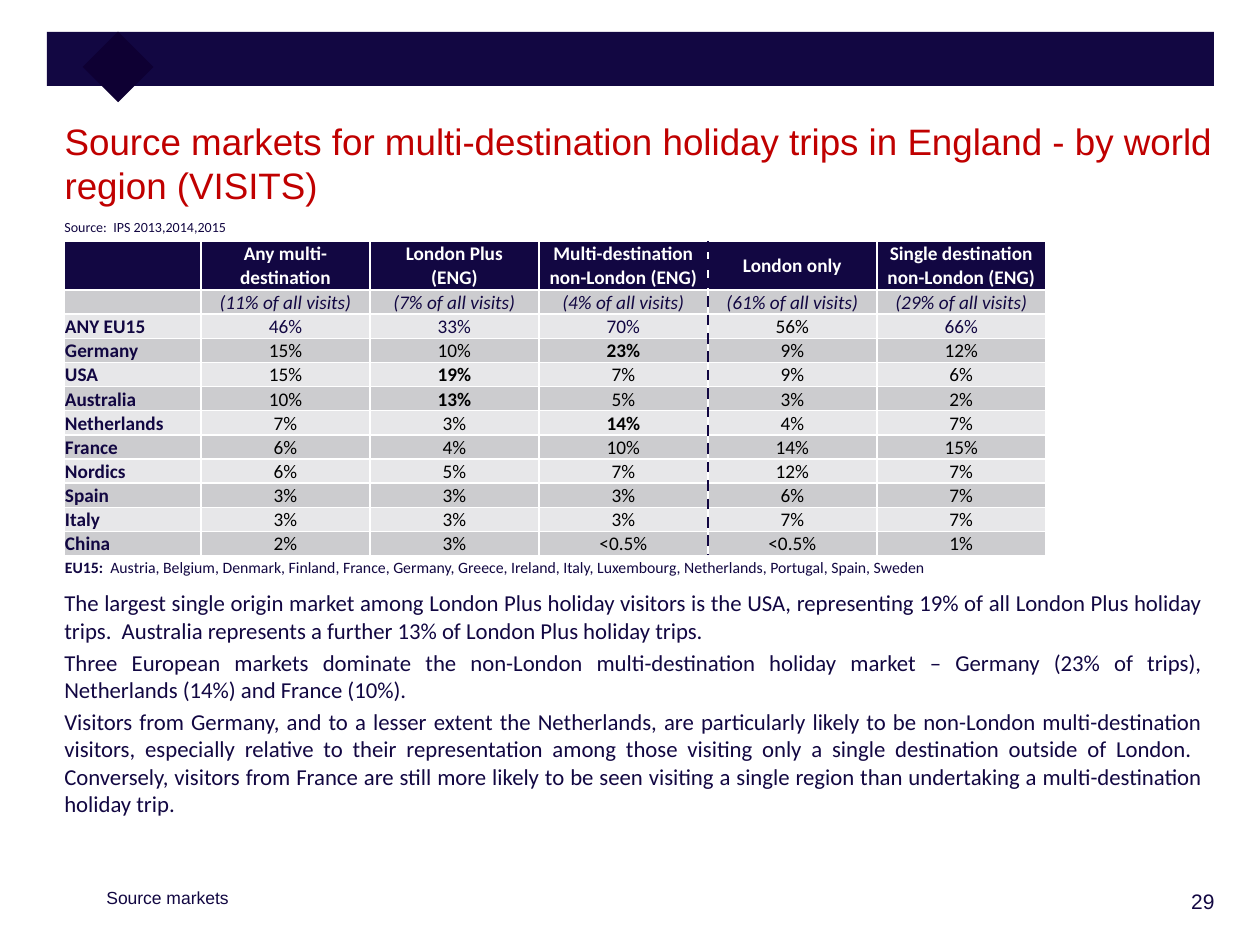
"""Build the slide on source markets for multi-destination holiday trips in England."""
import pptx
import pptx.dml.color
import pptx.enum.dml
import pptx.enum.shapes
import pptx.enum.text
import pptx.oxml.ns
import pptx.util
from lxml import etree

RGB = pptx.dml.color.RGBColor
NAVY = RGB(0x12, 0x07, 0x42)
DEEP_NAVY = RGB(0x0E, 0x00, 0x33)
RED = RGB(0xC0, 0x00, 0x00)
BLACK = RGB(0x00, 0x00, 0x00)
WHITE = RGB(0xFF, 0xFF, 0xFF)
DARK_BAND = RGB(0xCC, 0xCC, 0xCF)
LIGHT_BAND = RGB(0xE7, 0xE7, 0xE9)

ALIGN = pptx.enum.text.PP_ALIGN
ANCHOR = pptx.enum.text.MSO_ANCHOR

TITLE = "Source markets for multi-destination holiday trips in England - by world region (VISITS)"
SOURCE = "Source:  IPS 2013,2014,2015"
SECTION = "Source markets"
PAGE = "29"
HEADINGS = ["", "Any multi-destination", "London Plus\v(ENG)", "Multi-destination non-London (ENG)",
            "London only", "Single destination non-London (ENG)"]
SHARES = ["", "(11% of all visits)", "(7% of all visits)", "(4% of all visits)",
          "(61% of all visits)", "(29% of all visits)"]
MARKETS = [
    ["ANY EU15", "46%", "33%", "70%", "56%", "66%"],
    ["Germany", "15%", "10%", "23%", "9%", "12%"],
    ["USA", "15%", "19%", "7%", "9%", "6%"],
    ["Australia", "10%", "13%", "5%", "3%", "2%"],
    ["Netherlands", "7%", "3%", "14%", "4%", "7%"],
    ["France", "6%", "4%", "10%", "14%", "15%"],
    ["Nordics", "6%", "5%", "7%", "12%", "7%"],
    ["Spain", "3%", "3%", "3%", "6%", "7%"],
    ["Italy", "3%", "3%", "3%", "7%", "7%"],
    ["China", "2%", "3%", "<0.5%", "<0.5%", "1%"],
]
HIGHLIGHTS = {("Germany", 3), ("USA", 2), ("Australia", 2), ("Netherlands", 3)}
EU15 = ("EU15:  ", "Austria, Belgium, Denmark, Finland, France, Germany, Greece, Ireland, Italy, "
        "Luxembourg, Netherlands, Portugal, Spain, Sweden")
FINDINGS = [
    "The largest single origin market among London Plus holiday visitors is the USA, representing "
    "19% of all London Plus holiday trips.  Australia represents a further 13% of London Plus "
    "holiday trips.",
    "Three European markets dominate the non-London multi-destination holiday market – Germany "
    "(23% of trips), Netherlands (14%) and France (10%).",
    "Visitors from Germany, and to a lesser extent the Netherlands, are particularly likely to be "
    "non-London multi-destination visitors, especially relative to their representation among those "
    "visiting only a single destination outside of London.  Conversely, visitors from France are "
    "still more likely to be seen visiting a single region than undertaking a multi-destination "
    "holiday trip.",
]

TABLE_LEFT, TABLE_TOP = 64, 241
LABEL_WIDTH, VALUE_WIDTH = 137, 169
HEADING_HEIGHT, ROW_HEIGHT, NOTE_HEIGHT = 49, 24, 22


def px(length):
    return pptx.util.Emu(round(length * 914400 / 126))


def style(run, size, color, face="Calibri", bold=False, italic=False):
    font = run.font
    font.size, font.name, font.bold, font.italic = pptx.util.Pt(size), face, bold, italic
    font.color.rgb = color


def add_block(slide, left, top, width, height, color, rotation=0):
    block = slide.shapes.add_shape(pptx.enum.shapes.MSO_SHAPE.RECTANGLE,
                                   px(left), px(top), px(width), px(height))
    block.shadow.inherit = False
    block.fill.solid()
    block.fill.fore_color.rgb = color
    block.line.fill.background()
    block.rotation = rotation


def add_text(slide, place, paragraphs, size, face="Calibri", align=ALIGN.LEFT):
    frame = slide.shapes.add_textbox(*map(px, place)).text_frame
    frame.word_wrap = True
    frame.text = "\n".join(paragraphs)
    for number, paragraph in enumerate(frame.paragraphs):
        paragraph.alignment = align
        if number:
            paragraph.space_before = pptx.util.Pt(0.2 * size)
        style(paragraph.runs[0], size, NAVY, face)


def add_title(slide):
    title = slide.shapes.title
    title.left, title.top, title.width, title.height = map(px, (52, 112, 1208, 77))
    frame = title.text_frame
    frame.text = TITLE
    frame.auto_size = pptx.enum.text.MSO_AUTO_SIZE.NONE
    frame.vertical_anchor = ANCHOR.TOP
    frame.paragraphs[0].alignment = ALIGN.LEFT
    style(frame.paragraphs[0].runs[0], 21, RED, "Arial")


def cell_look(row, column):
    if row == 0:
        return dict(color=WHITE, bold=True)
    if row == 1:
        return dict(color=NAVY, italic=True)
    if column == 0:
        return dict(color=NAVY, bold=True)
    market = MARKETS[row - 2][0]
    navy_value = market == "ANY EU15" and column != 4
    return dict(color=NAVY if navy_value else BLACK, bold=(market, column) in HIGHLIGHTS)


def set_cell(cell, text, anchor, align):
    cell.margin_left = cell.margin_right = cell.margin_top = px(1)
    cell.margin_bottom = 0
    cell.vertical_anchor = anchor
    paragraph = cell.text_frame.paragraphs[0]
    paragraph.text = text
    paragraph.alignment = align
    if not text:
        etree.SubElement(paragraph._p, pptx.oxml.ns.qn("a:endParaRPr"), sz="900")
    return paragraph


def add_market_table(slide):
    rows = [HEADINGS, SHARES] + MARKETS
    heights = [HEADING_HEIGHT] + [ROW_HEIGHT] * (len(rows) - 1) + [NOTE_HEIGHT]
    widths = [LABEL_WIDTH] + [VALUE_WIDTH] * (len(HEADINGS) - 1)
    table = slide.shapes.add_table(len(heights), len(widths), px(TABLE_LEFT), px(TABLE_TOP),
                                   px(sum(widths)), px(sum(heights))).table
    for column, width in zip(table.columns, widths):
        column.width = px(width)
    for row, height in zip(table.rows, heights):
        row.height = px(height)

    for r, texts in enumerate(rows):
        for c, text in enumerate(texts):
            cell = table.cell(r, c)
            cell.fill.solid()
            cell.fill.fore_color.rgb = NAVY if r == 0 else DARK_BAND if r % 2 else LIGHT_BAND
            paragraph = set_cell(cell, text, ANCHOR.BOTTOM if r else ANCHOR.MIDDLE,
                                 ALIGN.CENTER if c else ALIGN.LEFT)
            for run in paragraph.runs:
                style(run, 11, **cell_look(r, c))

    note_row = len(rows)
    table.cell(note_row, 0).merge(table.cell(note_row, len(widths) - 1))
    for c in range(len(widths)):
        cell = table.cell(note_row, c)
        cell.fill.background()
        paragraph = set_cell(cell, "" if c else EU15[0], ANCHOR.BOTTOM, ALIGN.LEFT)
        if c == 0:
            paragraph.add_run().text = EU15[1]
            for run, bold in zip(paragraph.runs, (True, False)):
                style(run, 9, NAVY, bold=bold)


def add_divider(slide, x, top, bottom):
    divider = slide.shapes.add_connector(pptx.enum.shapes.MSO_CONNECTOR.STRAIGHT,
                                         px(x), px(top), px(x), px(bottom))
    divider.line.color.rgb = NAVY
    divider.line.width = pptx.util.Pt(1.5)
    divider.line.dash_style = pptx.enum.dml.MSO_LINE.DASH
    etree.SubElement(divider._element.spPr, pptx.oxml.ns.qn("a:effectLst"))


def main():
    deck = pptx.Presentation()
    deck.slide_width, deck.slide_height = px(1260), px(945)
    slide = deck.slides.add_slide(deck.slide_layouts[5])
    add_block(slide, 47, 32, 1167, 54, NAVY)
    add_block(slide, 93, 42, 50, 50, DEEP_NAVY, rotation=45)
    add_title(slide)
    add_text(slide, (52, 212, 285, 23), [SOURCE], 8)
    add_market_table(slide)
    add_divider(slide, TABLE_LEFT + LABEL_WIDTH + 3 * VALUE_WIDTH, TABLE_TOP, 554)
    add_text(slide, (52, 583, 1161, 287), FINDINGS, 13, align=ALIGN.JUSTIFY)
    add_text(slide, (94, 881, 336, 38), [SECTION], 10, "Arial")
    add_text(slide, (1075, 882, 152, 45), [PAGE], 12, "Arial", ALIGN.RIGHT)
    deck.save("out.pptx")


if __name__ == "__main__":
    main()
